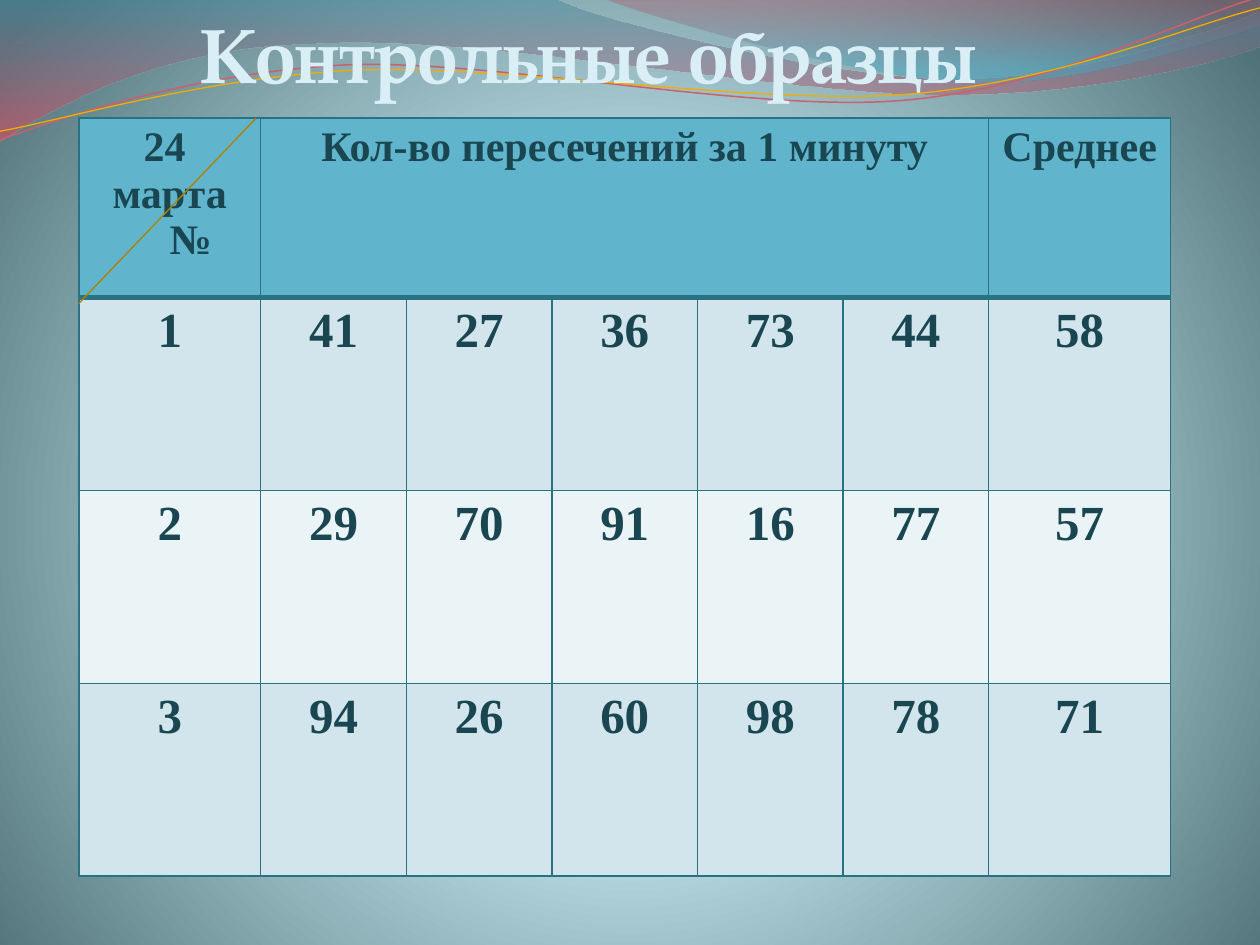
from lxml.etree import SubElement as Sub
from pptx import Presentation
from pptx.dml.color import RGBColor as Rgb
from pptx.enum.shapes import MSO_CONNECTOR as Link
from pptx.enum.text import MSO_ANCHOR as Anchor, PP_ALIGN as Align
from pptx.oxml.ns import qn
from pptx.util import Pt

SERIF = "Times New Roman"
INK, EDGE = "1A4652", "287281"
HEAD, BAND, PALE = "60B5CC", "D2E5EC", "EAF3F6"
COLS = [104] + [83.2] * 5 + [104]
ROWS = [102.6] + [110.2] * 3
DATA = [
    [1, 41, 27, 36, 73, 44, 58],
    [2, 29, 70, 91, 16, 77, 57],
    [3, 94, 26, 60, 98, 78, 71],
]
WAVE = [(0, -1), (317, -1), (343, 12, 478, 45, 546, 45),
        (614, 45, 690, 19, 720, 6.5), (721, 26),
        (708, 32, 626, 55, 537, 54), (447, 54, 275, 20, 185, 24.5),
        (93, 25, 33, 60, -1, 81)]
CREST = [(345, -1), (366, 8, 491, 45, 554, 47),
         (616, 50, 692, 23, 720, 15), (720, 0)]
ROSE = [(-1.4, 63), (34.2, 51.7, 114.3, 29.4, 199.4, 29.5),
        (284.4, 30.5, 425.9, 67.2, 512.1, 64.8),
        (599.3, 62.3, 676.1, 25.9, 720.6, 15.5)]
GOLD = [(-1.1, 58), (33.1, 53.7, 118.2, 32.6, 204.3, 32.7),
        (290.3, 33.7, 429.1, 63.3, 515.3, 61.4),
        (601.5, 59.4, 678.9, 30, 721.4, 21.5)]


def color(code):
    return Rgb.from_string(code)


def blend(fill, root, stops, focus=None):
    fill.gradient()
    grad = root.find(".//" + qn("a:gradFill"))
    for kid in list(grad):
        grad.remove(kid)
    group = Sub(grad, qn("a:gsLst"))
    for pos, code, alpha in stops:
        stop = Sub(group, qn("a:gs"), pos=str(pos * 1000))
        tint = Sub(stop, qn("a:srgbClr"), val=code)
        if alpha < 100:
            Sub(tint, qn("a:alpha"), val=str(alpha * 1000))
    if focus:
        path = Sub(grad, qn("a:path"), path="circle")
        sides = {side: str(val * 1000) for side, val in zip("ltrb", focus)}
        Sub(path, qn("a:fillToRect"), **sides)
    else:
        Sub(grad, qn("a:lin"), ang="5400000", scaled="1")


def bend(shape, parts):
    lines = iter(shape.element.findall(".//" + qn("a:lnTo")))
    for part in parts[1:]:
        line = next(lines)
        if len(part) == 6:
            line.tag = qn("a:cubicBezTo")
            for _ in range(2):
                spare = next(lines)
                line.append(spare[0])
                spare.getparent().remove(spare)


def outline(slide, parts, close):
    dots = [(Pt(x), Pt(y)) for part in parts
            for x, y in zip(part[::2], part[1::2])]
    pen = slide.shapes.build_freeform(*dots[0])
    pen.add_line_segments(dots[1:], close=close)
    shape = pen.convert_to_shape()
    bend(shape, parts)
    shape.shadow.inherit = False
    return shape


def ribbon(slide, parts, stops):
    shape = outline(slide, parts, True)
    blend(shape.fill, shape.element, stops)
    shape.line.fill.background()


def strand(slide, parts, code, width):
    shape = outline(slide, parts, False)
    shape.rotation = 357.3
    shape.fill.background()
    shape.line.color.rgb = color(code)
    shape.line.width = Pt(width)


def write(frame, text, size, code, font):
    frame.text = text
    for para in frame.paragraphs:
        para.alignment = Align.CENTER
        para.font.size = Pt(size)
        para.font.name = font
        para.font.bold = True
        para.font.color.rgb = color(code)


def border(cell, top, bottom):
    props = cell._tc.get_or_add_tcPr()
    for side, width in zip("LRTB", (1, 1, top, bottom)):
        edge = Sub(props, qn("a:ln" + side), w=str(Pt(width)))
        Sub(Sub(edge, qn("a:solidFill")), qn("a:srgbClr"), val=EDGE)


def grid(slide):
    table = slide.shapes.add_table(len(ROWS), len(COLS), Pt(45), Pt(67.5),
                                   Pt(sum(COLS)), Pt(sum(ROWS))).table
    for col, width in zip(table.columns, COLS):
        col.width = Pt(width)
    for row, height in zip(table.rows, ROWS):
        row.height = Pt(height)
    table.cell(0, 1).merge(table.cell(0, 5))
    heads = ["24 \nмарта\n№", "Кол-во пересечений за 1 минуту",
             "", "", "", "", "Среднее"]
    for r, row in enumerate([heads] + DATA):
        for c, val in enumerate(row):
            cell = table.cell(r, c)
            border(cell, 3 if r == 1 else 1, 3 if r == 0 else 1)
            cell.fill.solid()
            shade = HEAD if r == 0 else BAND if r % 2 else PALE
            cell.fill.fore_color.rgb = color(shade)
            if val:
                write(cell.text_frame, str(val), 28 if r else 24, INK, SERIF)
    mark = table.cell(0, 0).text_frame.paragraphs[-1]
    mark._p.get_or_add_pPr().set("marL", str(Pt(24)))


def title(slide, text):
    box = slide.shapes.add_textbox(Pt(62), Pt(0), Pt(548.6), Pt(60.5))
    frame = box.text_frame
    frame.word_wrap = True
    frame.vertical_anchor = Anchor.TOP
    write(frame, text, 44, "DAEEF6", "TeX Gyre Pagella")


def slash(slide):
    line = slide.shapes.add_connector(Link.STRAIGHT, Pt(146.2), Pt(67.7),
                                      Pt(45), Pt(173.5))
    line.line.color.rgb = color("B28000")
    line.line.width = Pt(0.75)
    Sub(line.element.spPr, qn("a:effectLst"))


def main():
    deck = Presentation()
    deck.slide_width, deck.slide_height = Pt(720), Pt(540)
    slide = deck.slides.add_slide(deck.slide_layouts[6])
    blend(slide.background.fill, slide.element,
          [(0, "D5F7FF", 100), (25, "D3F7FF", 100), (100, "507178", 100)],
          (10, 110, 10, 100))
    ribbon(slide, WAVE, [(0, "3F8A9F", 45), (100, "EF445B", 55)])
    ribbon(slide, CREST, [(0, "B84253", 30), (80, "42ABC7", 45)])
    strand(slide, ROSE, "CB5F6E", 0.85)
    strand(slide, GOLD, "F0AD00", 0.75)
    grid(slide)
    title(slide, "Контрольные образцы")
    slash(slide)
    deck.save("out.pptx")


if __name__ == "__main__":
    main()
